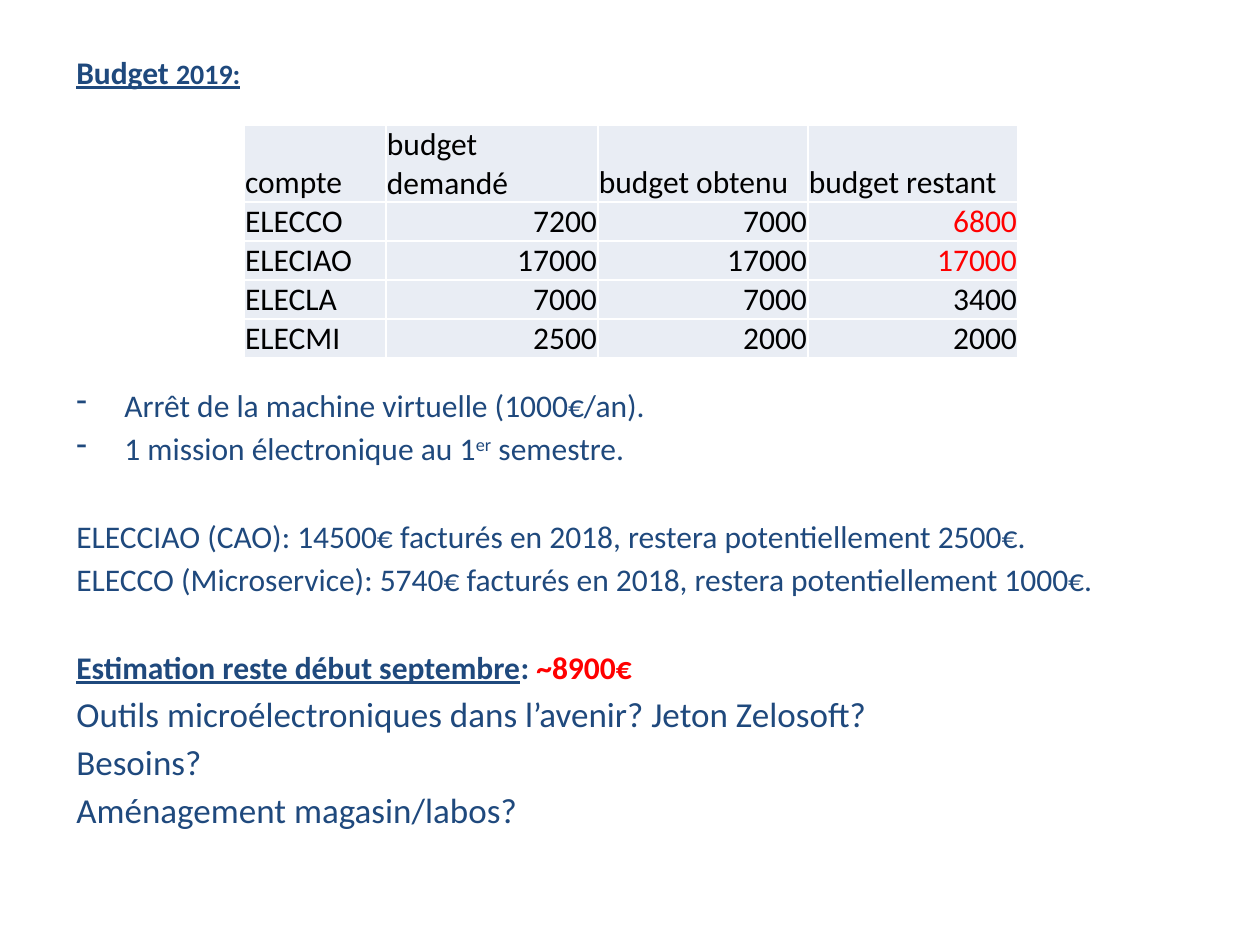
from lxml.etree import SubElement
from pptx import Presentation
from pptx.dml.color import RGBColor
from pptx.enum.text import MSO_ANCHOR as Anchor, PP_ALIGN as Align
from pptx.oxml import parse_xml
from pptx.oxml.ns import nsdecls, qn
from pptx.util import Pt

SCALE = 914400 // 126
NAVY, RED, BLACK, WHITE, PALE = "1F497D", "FF0000", "000000", "FFFFFF", "E9EDF4"
TITLE = dict(size=18, bold=True, underline=True)
TEXT = dict(size=18)
LARGE = dict(size=20)
GAP, LARGE_GAP, BLANK_GAP, TABLE_GAP = 3.3, 3.6, 28.5, 168.5

PARAGRAPHS = [
    (0, False, [("Budget ", TITLE), ("2019:", TITLE | dict(size=16))]),
    (TABLE_GAP, True, [("Arrêt de la machine virtuelle (1000€/an).", TEXT)]),
    (GAP, True, [
        ("1 mission électronique au 1", TEXT),
        ("er", TEXT | dict(baseline=30000)),
        (" semestre.", TEXT),
    ]),
    (BLANK_GAP, False, [
        ("ELECCIAO (CAO): 14500€ facturés en 2018, restera potentiellement 2500€.", TEXT),
    ]),
    (GAP, False, [
        ("ELECCO (Microservice): 5740€ facturés en 2018, restera potentiellement 1000€.", TEXT),
    ]),
    (BLANK_GAP, False, [
        ("Estimation reste début septembre", TITLE),
        (": ", dict(size=18, bold=True)),
        ("~8900€", dict(size=18, bold=True, color=RED)),
    ]),
    (LARGE_GAP, False, [("Outils microélectroniques dans l’avenir? Jeton Zelosoft?", LARGE)]),
    (LARGE_GAP, False, [("Besoins?", LARGE)]),
    (LARGE_GAP, False, [("Aménagement magasin/labos?", LARGE)]),
]
BUDGETS = [
    ("compte", "budget demandé", "budget obtenu", "budget restant"),
    ("ELECCO", "7200", "7000", "6800"),
    ("ELECIAO", "17000", "17000", "17000"),
    ("ELECLA", "7000", "7000", "3400"),
    ("ELECMI", "2500", "2000", "2000"),
]
RED_CELLS = {(1, 3), (2, 3)}
COLUMN_WIDTHS = [142, 212, 210, 210]
ROW_HEIGHTS = [77] + [39] * 4


def px(*lengths):
    """Turn pixel lengths into EMU."""
    return [length * SCALE for length in lengths]


def rgb(value):
    """Turn a hex string into a colour."""
    return RGBColor.from_string(value)


def add_span(para, text, color, size, baseline=None, **formats):
    """Add one formatted run to a paragraph."""
    span = para.add_run()
    span.text = text
    for name, value in dict(name="Calibri", size=Pt(size), **formats).items():
        setattr(span.font, name, value)
    span.font.color.rgb = rgb(color)
    if baseline:
        span._r.get_or_add_rPr().set("baseline", str(baseline))


def add_dash(para):
    """Give a paragraph a hanging dash."""
    props = para._p.get_or_add_pPr()
    indent = px(48)[0]
    props.set("marL", str(indent))
    props.set("indent", str(-indent))
    SubElement(props, qn("a:buFontTx"))
    SubElement(props, qn("a:buChar"), char="-")


def add_body(page):
    """Write the text around the budget table."""
    frame = page.shapes.add_textbox(*px(64, 45, 1134, 814)).text_frame
    frame.word_wrap = True
    frame.margin_top = px(8)[0]
    for index, (gap, dashed, spans) in enumerate(PARAGRAPHS):
        para = frame.add_paragraph() if index else frame.paragraphs[0]
        if dashed:
            add_dash(para)
        para.space_before = Pt(gap)
        for text, formats in spans:
            add_span(para, text, **(dict(color=NAVY) | formats))


def add_borders(cell):
    """Draw thin white lines on all sides of a cell."""
    props = cell._tc.get_or_add_tcPr()
    for index, side in enumerate("LRTB"):
        props.insert(index, parse_xml(
            f'<a:ln{side} {nsdecls("a")} w="12700"><a:solidFill>'
            f'<a:srgbClr val="{WHITE}"/></a:solidFill></a:ln{side}>'))


def add_budget_table(page):
    """Build the table of budgets by account."""
    area = px(244, 125, sum(COLUMN_WIDTHS), sum(ROW_HEIGHTS))
    table = page.shapes.add_table(len(BUDGETS), len(COLUMN_WIDTHS), *area).table
    table.first_row = table.horz_banding = False
    for column, width in zip(table.columns, px(*COLUMN_WIDTHS)):
        column.width = width
    for row, height in zip(table.rows, px(*ROW_HEIGHTS)):
        row.height = height
    margin = px(1)[0]
    layout = dict(margin_left=margin, margin_right=margin, margin_top=margin,
                  margin_bottom=0, vertical_anchor=Anchor.BOTTOM)
    for r, values in enumerate(BUDGETS):
        for c, value in enumerate(values):
            cell = table.cell(r, c)
            for name, setting in layout.items():
                setattr(cell, name, setting)
            cell.fill.solid()
            cell.fill.fore_color.rgb = rgb(PALE)
            add_borders(cell)
            para = cell.text_frame.paragraphs[0]
            para.alignment = Align.RIGHT if r and c else Align.LEFT
            add_span(para, value, RED if (r, c) in RED_CELLS else BLACK, 18)


def main():
    """Build and save the budget slide."""
    deck = Presentation()
    deck.slide_width, deck.slide_height = px(1260, 945)
    page = deck.slides.add_slide(deck.slide_layouts[6])
    add_body(page)
    add_budget_table(page)
    deck.save("out.pptx")


if __name__ == "__main__":
    main()
